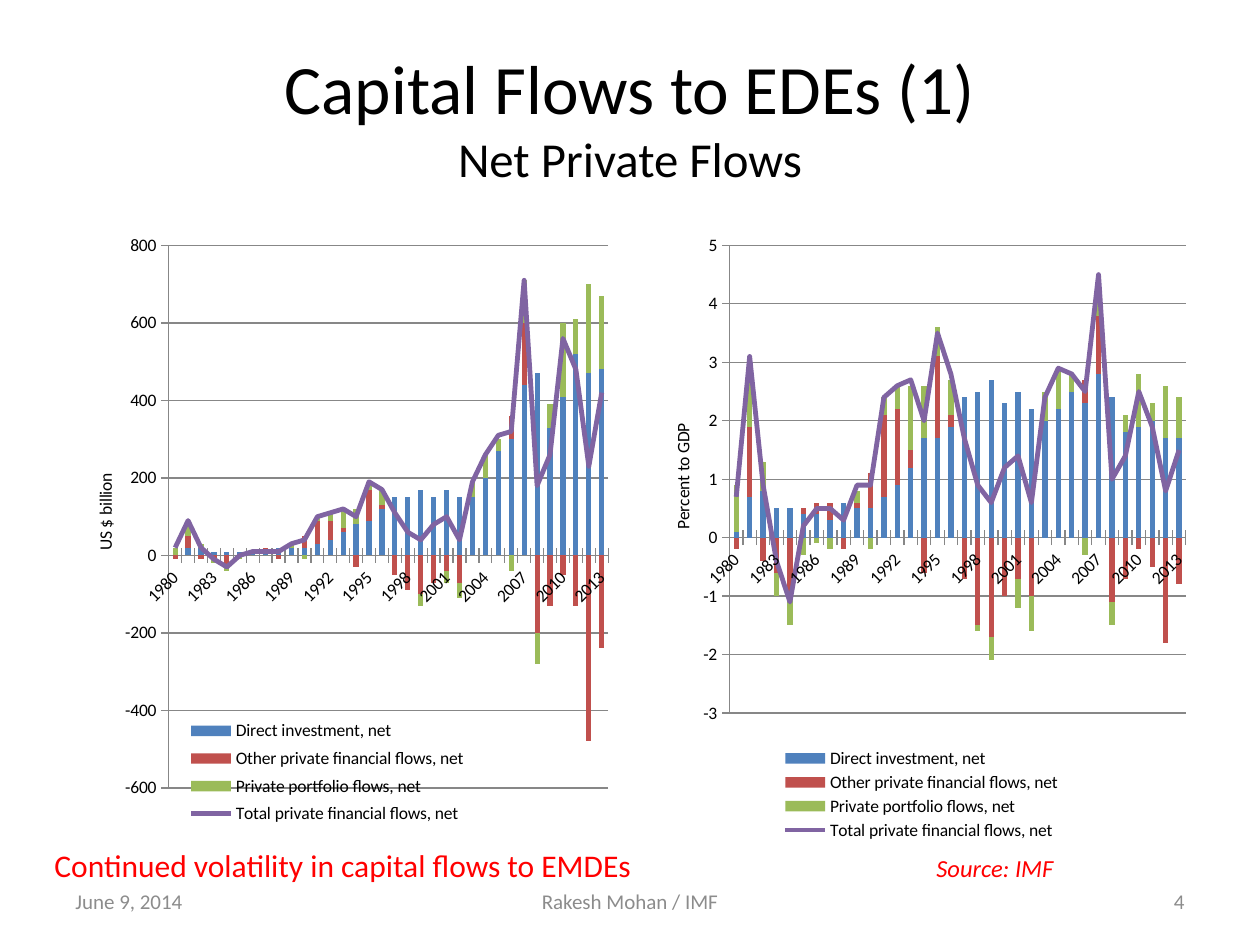
"""Build a slide with two charts of net private capital flows."""
from dataclasses import dataclass

from lxml.etree import SubElement
from pptx import Presentation
from pptx.chart.data import CategoryChartData
from pptx.dml.color import RGBColor
from pptx.enum.chart import XL_CHART_TYPE, XL_LEGEND_POSITION, XL_TICK_MARK
from pptx.enum.text import MSO_ANCHOR, MSO_AUTO_SIZE, PP_ALIGN
from pptx.oxml import parse_xml
from pptx.oxml.ns import nsdecls, qn
from pptx.util import Pt


@dataclass(frozen=True)
class Theme:
    font: str = "Calibri"
    ink: str = "000000"
    muted: str = "8C8C8C"
    accent: str = "FF0000"
    grid: str = "878787"
    series: tuple = ("4F81BD", "C0504D", "9BBB59", "8064A2")
    title: float = 39.6
    subtitle: float = 27.9
    note: float = 18
    source: float = 14
    footer: float = 12
    chart: float = 10


THEME = Theme()
YEARS = [str(year) for year in range(1980, 2014)]
NAMES = ("Direct investment, net", "Other private financial flows, net",
         "Private portfolio flows, net", "Total private financial flows, net")

BILLIONS = (
    (0, 20, 20, 10, 10, 10, 10, 10, 20, 20, 20, 30, 40, 60, 80, 90, 120, 150, 150, 170, 150, 170,
     150, 150, 200, 270, 300, 440, 470, 330, 410, 520, 470, 480),
    (-10, 30, -10, -10, -30, 0, 0, 10, -10, 0, 30, 60, 50, 10, -30, 80, 10, -50, -90, -100, -70,
     -40, -70, 0, 0, 0, 60, 160, -200, -130, -50, -130, -480, -240),
    (20, 30, 10, -10, -10, -10, 0, 0, 0, 10, -10, 10, 20, 50, 40, 20, 40, 0, 0, -30, 0, -30, -40,
     40, 60, 30, -40, 110, -80, 60, 190, 90, 230, 190),
    (20, 90, 20, -10, -30, 0, 10, 10, 10, 30, 40, 100, 110, 120, 100, 190, 170, 110, 60, 40, 80,
     100, 40, 190, 260, 310, 320, 710, 180, 260, 560, 480, 230, 420),
)
PERCENTS = (
    (0.1, 0.7, 0.8, 0.5, 0.5, 0.4, 0.4, 0.3, 0.6, 0.5, 0.5, 0.7, 0.9, 1.2, 1.7, 1.7, 1.9, 2.4,
     2.5, 2.7, 2.3, 2.5, 2.2, 2, 2.2, 2.5, 2.3, 2.8, 2.4, 1.8, 1.9, 2, 1.7, 1.7),
    (-0.2, 1.2, -0.4, -0.6, -1, 0.1, 0.2, 0.3, -0.2, 0.1, 0.6, 1.4, 1.3, 0.3, -0.6, 1.4, 0.2,
     -0.7, -1.5, -1.7, -1, -0.7, -1, 0, 0, 0, 0.4, 1, -1.1, -0.7, -0.2, -0.5, -1.8, -0.8),
    (0.8, 1.2, 0.5, -0.4, -0.5, -0.3, -0.1, -0.2, 0, 0.2, -0.2, 0.3, 0.4, 1.1, 0.9, 0.5, 0.6, 0,
     -0.1, -0.4, 0, -0.5, -0.6, 0.5, 0.7, 0.3, -0.3, 0.7, -0.4, 0.3, 0.9, 0.3, 0.9, 0.7),
    (0.7, 3.1, 0.9, -0.4, -1.1, 0.2, 0.5, 0.5, 0.3, 0.9, 0.9, 2.4, 2.6, 2.7, 2, 3.5, 2.8, 1.7,
     0.9, 0.6, 1.2, 1.4, 0.6, 2.4, 2.9, 2.8, 2.5, 4.5, 1, 1.4, 2.5, 1.9, 0.8, 1.5),
)


def style_font(font, size, color=THEME.ink, italic=False, bold=False):
    font.name, font.size, font.italic, font.bold = THEME.font, Pt(size), italic, bold
    font.color.rgb = RGBColor.from_string(color)


def write(para, text, **style):
    span = para.add_run()
    span.text = text
    style_font(span.font, **style)


def place(element, index, **fractions):
    for old in element.findall(qn("c:layout")):
        element.remove(old)
    layout = parse_xml(f"<c:layout {nsdecls('c')}/>")
    manual = SubElement(layout, qn("c:manualLayout"))
    if element.tag == qn("c:plotArea"):
        SubElement(manual, qn("c:layoutTarget"), val="inner")
    for side in "xy":
        SubElement(manual, qn(f"c:{side}Mode"), val="edge")
    for side, fraction in fractions.items():
        SubElement(manual, qn(f"c:{side}"), val=str(fraction))
    element.insert(index, layout)


def turn_last_series_into_line(chart):
    bars = chart.plots[0]._element
    series = bars.findall(qn("c:ser"))[-1]
    for flag in series.findall(qn("c:invertIfNegative")):
        series.remove(flag)
    marker = parse_xml(f'<c:marker {nsdecls("c")}><c:symbol val="none"/></c:marker>')
    series.find(qn("c:cat")).addprevious(marker)
    SubElement(series, qn("c:smooth"), val="0")
    lines = parse_xml(f'<c:lineChart {nsdecls("c")}><c:grouping val="standard"/>'
                      '<c:varyColors val="0"/></c:lineChart>')
    lines.append(series)
    SubElement(lines, qn("c:marker"), val="1")
    for axis in bars.findall(qn("c:axId")):
        SubElement(lines, qn("c:axId"), val=axis.get("val"))
    bars.addnext(lines)


class SlideBuilder:
    def __init__(self, page):
        self.page = page

    def title(self, heading, subtitle, left, top, width, height):
        box = self.page.shapes.title
        box.left, box.top, box.width, box.height = map(Pt, (left, top, width, height))
        frame = box.text_frame
        frame.auto_size, frame.vertical_anchor = MSO_AUTO_SIZE.NONE, MSO_ANCHOR.MIDDLE
        para = frame.paragraphs[0]
        para.alignment = PP_ALIGN.CENTER
        write(para, heading, size=THEME.title)
        para.add_line_break()
        SubElement(para._p[-1], qn("a:rPr"), sz=str(round(THEME.title * 100)))
        write(para, subtitle, size=THEME.subtitle)

    def text(self, left, top, width, height, align=PP_ALIGN.LEFT, anchor=MSO_ANCHOR.MIDDLE):
        box = self.page.shapes.add_textbox(*map(Pt, (left, top, width, height)))
        frame = box.text_frame
        frame.word_wrap, frame.vertical_anchor = True, anchor
        frame.paragraphs[0].alignment = align
        return frame

    def footer(self, text, left, width, align):
        frame = self.text(left, 500.5, width, 28.75, align)
        write(frame.paragraphs[0], text, size=THEME.footer, color=THEME.muted)

    def note(self, message, source, left, top, width, height, tab):
        frame = self.text(left, top, width, height, anchor=MSO_ANCHOR.TOP)
        frame.auto_size = MSO_AUTO_SIZE.SHAPE_TO_FIT_TEXT
        para = frame.paragraphs[0]
        stops = SubElement(para._p.get_or_add_pPr(), qn("a:tabLst"))
        SubElement(stops, qn("a:tab"), pos=str(Pt(tab)), algn="l")
        write(para, f"{message}\t", size=THEME.note, color=THEME.accent)
        write(para, source, size=THEME.source, color=THEME.accent, italic=True)

    def chart(self, left, unit, rows, scale, plot, legend, label):
        data = CategoryChartData(number_format="General")
        data.categories = YEARS
        for name, values in zip(NAMES, rows):
            data.add_series(name, values)
        chart = self.page.shapes.add_chart(
            XL_CHART_TYPE.COLUMN_STACKED, *map(Pt, (left, 126, 318, 356.4)), data).chart
        style_font(chart.font, THEME.chart)
        chart.has_title = False
        bars = chart.plots[0]
        bars.vary_by_categories, bars.gap_width, bars.overlap = False, 150, 100
        *columns, total = bars.series
        for series, color in zip(columns, THEME.series):
            series.format.fill.solid()
            series.format.fill.fore_color.rgb = RGBColor.from_string(color)
            series.invert_if_negative = False
        self.line(total.format.line, THEME.series[-1], 2.75)
        self.axes(chart, unit, scale, label)
        chart.has_legend = True
        chart.legend.position = XL_LEGEND_POSITION.BOTTOM
        chart.legend.include_in_layout = False
        style_font(chart.legend.font, THEME.chart)
        place(chart.legend._element, 1, **legend)
        place(bars._element.getparent(), 0, **plot)
        turn_last_series_into_line(chart)

    def axes(self, chart, unit, scale, label):
        years, values = chart.category_axis, chart.value_axis
        values.minimum_scale, values.maximum_scale, values.major_unit = scale
        values.has_major_gridlines = True
        self.line(values.major_gridlines.format.line, THEME.grid, 0.75)
        for axis in (years, values):
            axis.major_tick_mark = XL_TICK_MARK.CROSS
            style_font(axis.tick_labels.font, THEME.chart)
            self.line(axis.format.line, THEME.grid, 0.75)
        values.tick_labels.number_format = "0"
        values.tick_labels.number_format_is_linked = False
        write(values.axis_title.text_frame.paragraphs[0], unit, size=THEME.chart)
        place(values.axis_title._element, 1, **label)
        element = years._element
        element.find(qn("c:txPr")).find(qn("a:bodyPr")).set("rot", "-2700000")
        skip = parse_xml(f'<c:tickLblSkip {nsdecls("c")} val="3"/>')
        element.find(qn("c:noMultiLvlLbl")).addprevious(skip)

    def line(self, line, color, width):
        line.color.rgb = RGBColor.from_string(color)
        line.width = Pt(width)


def main():
    deck = Presentation()
    deck.slide_width, deck.slide_height = Pt(720), Pt(540)
    builder = SlideBuilder(deck.slides.add_slide(deck.slide_layouts[5]))
    builder.title("Capital Flows to EDEs (1)", "Net Private Flows", 36, 21.6, 648, 90)
    builder.footer("June 9, 2014", 36, 168, PP_ALIGN.LEFT)
    builder.footer("Rakesh Mohan / IMF", 246, 228, PP_ALIGN.CENTER)
    builder.footer("4", 516, 168, PP_ALIGN.RIGHT)
    builder.chart(36, "US $ billion", BILLIONS, (-600, 800, 200),
                  plot=dict(x=0.19, y=0.04, w=0.79, h=0.87),
                  legend=dict(x=0.22, y=0.79, w=0.51, h=0.19), label=dict(x=0.05, y=0.4))
    builder.chart(366, "Percent to GDP", PERCENTS, (-3, 5, 1),
                  plot=dict(x=0.16, y=0.04, w=0.82, h=0.75),
                  legend=dict(x=0.25, y=0.84, w=0.51, h=0.16), label=dict(x=0.05, y=0.32))
    builder.note("Continued volatility in capital flows to EMDEs", "Source: IMF",
                 24, 480, 636, 29, tab=504)
    deck.save("out.pptx")


if __name__ == "__main__":
    main()
